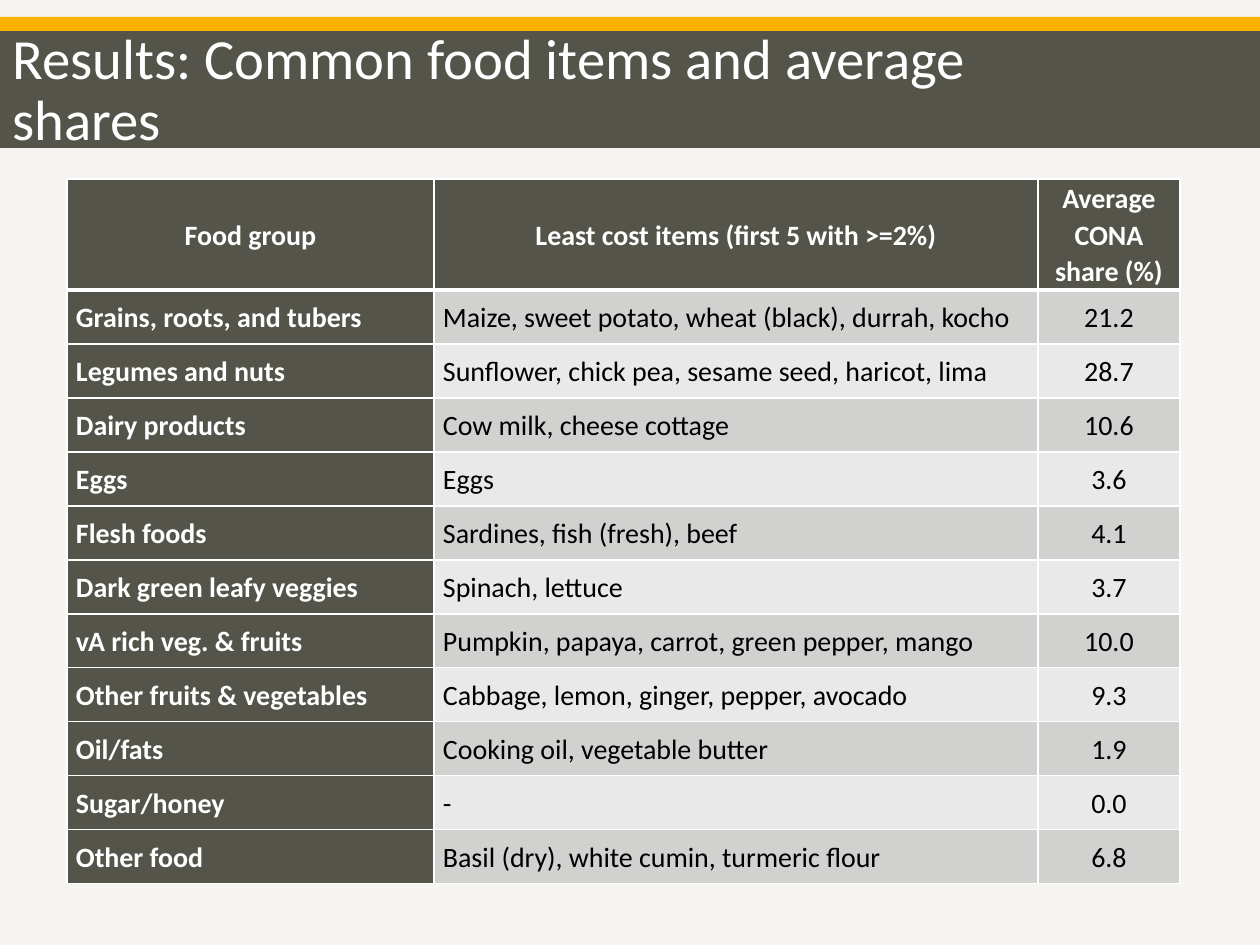
import lxml.etree
import pptx
import pptx.dml.color
import pptx.enum.shapes
import pptx.enum.text
import pptx.oxml.ns
import pptx.util

COLORS = {
    "background": "F5F4F0",
    "accent": "FFB300",
    "dark": "54544B",
    "white": "FFFFFF",
    "black": "000000",
    "odd": "D1D1D0",
    "even": "E9E9E9",
}
FONT = "Calibri"
HEADER = ("Food group", "Least cost items (first 5 with >=2%)", "Average CONA share (%)")
FOODS = [
    ("Grains, roots, and tubers", "Maize, sweet potato, wheat (black), durrah, kocho", "21.2"),
    ("Legumes and nuts", "Sunflower, chick pea, sesame seed, haricot, lima", "28.7"),
    ("Dairy products", "Cow milk, cheese cottage", "10.6"),
    ("Eggs", "Eggs", "3.6"),
    ("Flesh foods", "Sardines, fish (fresh), beef", "4.1"),
    ("Dark green leafy veggies", "Spinach, lettuce", "3.7"),
    ("vA rich veg. & fruits", "Pumpkin, papaya, carrot, green pepper, mango", "10.0"),
    ("Other fruits & vegetables", "Cabbage, lemon, ginger, pepper, avocado", "9.3"),
    ("Oil/fats", "Cooking oil, vegetable butter", "1.9"),
    ("Sugar/honey", "-", "0.0"),
    ("Other food", "Basil (dry), white cumin, turmeric flour", "6.8"),
]
COLUMN_WIDTHS = (367, 604, 142)
HEADER_HEIGHT, ROW_HEIGHT = 111, 54


def px(n):
    """Turn pixels, 126 to the inch, into EMU."""
    return pptx.util.Emu(round(n * 914400 / 126))


def rgb(name):
    return pptx.dml.color.RGBColor.from_string(COLORS[name])


prs = pptx.Presentation()
prs.slide_width, prs.slide_height = px(1260), px(945)
s = prs.slides.add_slide(prs.slide_layouts[6])
s.background.fill.solid()
s.background.fill.fore_color.rgb = rgb("background")

# Title band
for top, height, color in ((17, 14, "accent"), (31, 117, "dark")):
    sp = s.shapes.add_shape(
        pptx.enum.shapes.MSO_SHAPE.RECTANGLE, 0, px(top), px(1260), px(height))
    sp.shadow.inherit = False
    sp.fill.solid()
    sp.fill.fore_color.rgb = rgb(color)
    sp.line.fill.background()

tf = s.shapes.add_textbox(0, px(33), px(1129), px(117)).text_frame
tf.word_wrap = True
tf.vertical_anchor = pptx.enum.text.MSO_ANCHOR.MIDDLE
p = tf.paragraphs[0]
p.text = "Results: Common food items and average shares"
p.line_spacing = 0.9
p.font.name = FONT
p.font.size = pptx.util.Pt(32.4)
p.font.color.rgb = rgb("white")

# Food table
rows = [HEADER] + FOODS
table = s.shapes.add_table(
    len(rows), len(HEADER), px(67), px(179), px(sum(COLUMN_WIDTHS)),
    px(HEADER_HEIGHT + ROW_HEIGHT * len(FOODS))).table
for column, width in zip(table.columns, COLUMN_WIDTHS):
    column.width = px(width)

for i, texts in enumerate(rows):
    table.rows[i].height = px(ROW_HEIGHT if i else HEADER_HEIGHT)
    for j, text in enumerate(texts):
        cell = table.cell(i, j)
        heading = i == 0 or j == 0
        cell.margin_left = cell.margin_right = px(9)
        cell.margin_top = cell.margin_bottom = 0
        cell.vertical_anchor = pptx.enum.text.MSO_ANCHOR.MIDDLE

        tcPr = cell._tc.get_or_add_tcPr()
        for side in ("lnL", "lnR", "lnT", "lnB"):
            thick = (i, side) in ((0, "lnB"), (1, "lnT"))
            ln = lxml.etree.SubElement(
                tcPr, pptx.oxml.ns.qn(f"a:{side}"), w=str(pptx.util.Pt(3 if thick else 1)))
            fill = lxml.etree.SubElement(ln, pptx.oxml.ns.qn("a:solidFill"))
            lxml.etree.SubElement(fill, pptx.oxml.ns.qn("a:srgbClr"), val=COLORS["white"])

        cell.fill.solid()
        cell.fill.fore_color.rgb = rgb("dark" if heading else "odd" if i % 2 else "even")

        p = cell.text_frame.paragraphs[0]
        p.text = text
        p.line_spacing = 1.07
        if i == 0 or j == 2:
            p.alignment = pptx.enum.text.PP_ALIGN.CENTER
        p.font.name = FONT
        p.font.size = pptx.util.Pt(16)
        p.font.bold = heading
        p.font.color.rgb = rgb("white" if heading else "black")

prs.save("out.pptx")
